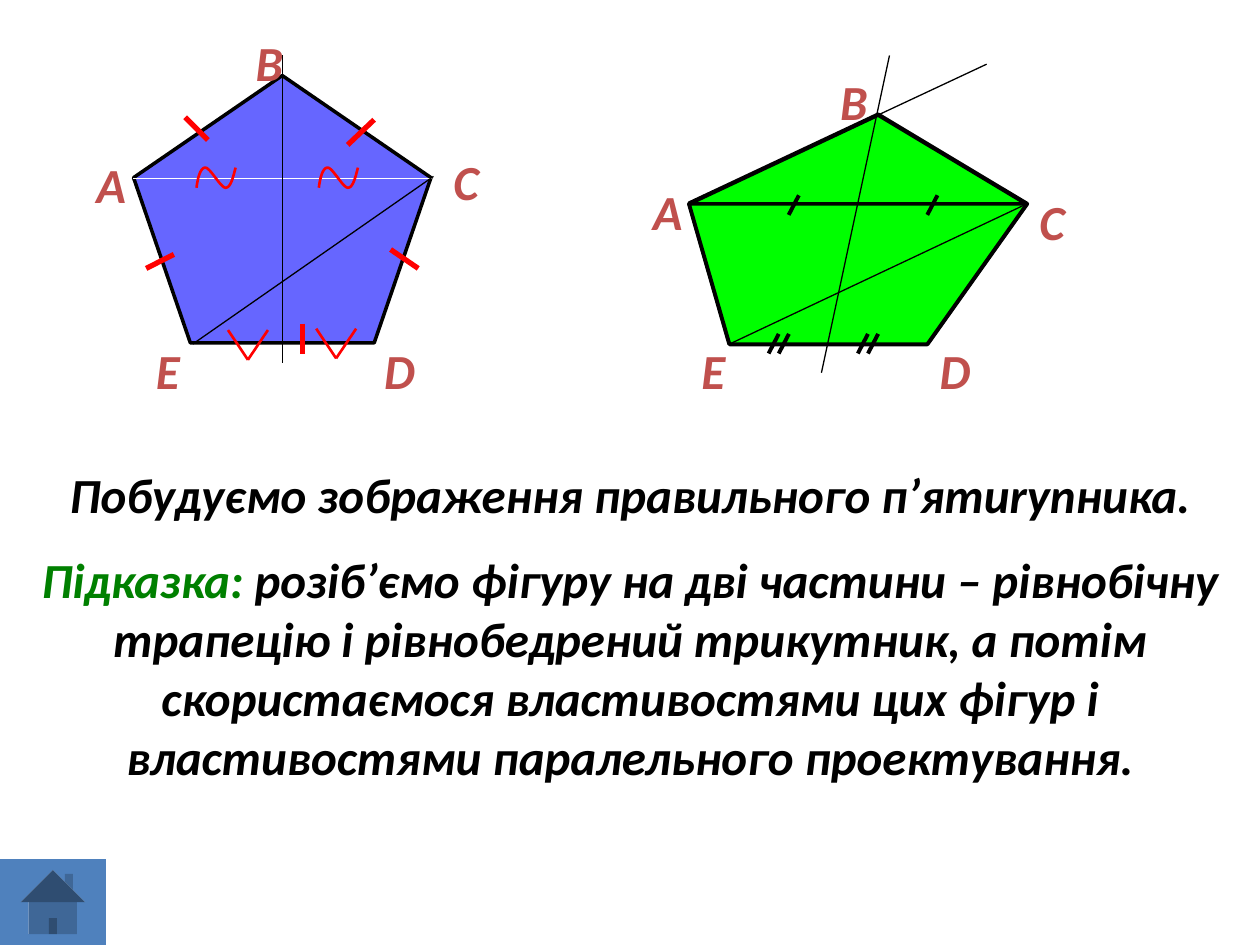
from dataclasses import dataclass

from lxml.etree import SubElement
from pptx import Presentation
from pptx.dml.color import RGBColor
from pptx.enum.shapes import MSO_CONNECTOR, MSO_SHAPE
from pptx.enum.text import PP_ALIGN
from pptx.oxml.ns import qn
from pptx.util import Pt


@dataclass(frozen=True)
class Theme:
    font: str = "Calibri"
    text_size: float = 28
    thin: float = 0.75
    black: str = "000000"
    white: str = "FFFFFF"
    red: str = "FF0000"
    label: str = "C0504D"
    hint: str = "008000"
    blue: str = "0000FF"
    green: str = "00FF00"
    button: str = "4F81BD"


@dataclass(frozen=True)
class Box:
    left: float
    top: float
    width: float
    height: float

    def at(self, x, y):
        return Pt(self.left + x), Pt(self.top + y)


THEME = Theme()


def style_shape(shape, fill=None, line=None, width=0):
    shape.shadow.inherit = False
    if fill:
        shape.fill.solid()
        shape.fill.fore_color.rgb = RGBColor.from_string(fill)
    else:
        shape.fill.background()
    if line:
        shape.line.color.rgb = RGBColor.from_string(line)
        shape.line.width = Pt(width)
    else:
        shape.line.fill.background()


def add_line(slide, box, start, end, color, width):
    connector = slide.shapes.add_connector(
        MSO_CONNECTOR.STRAIGHT, *box.at(*start), *box.at(*end))
    connector.line.color.rgb = RGBColor.from_string(color)
    connector.line.width = Pt(width)
    SubElement(connector._element.spPr, qn("a:effectLst"))


def add_outline(slide, box, points, close, fill, line, width):
    builder = slide.shapes.build_freeform(*box.at(*points[0]), scale=1.0)
    builder.add_line_segments([box.at(*point) for point in points[1:]], close=close)
    style_shape(builder.convert_to_shape(), fill, line, width)


def add_run(paragraph, text, color):
    run = paragraph.add_run()
    run.text = text
    run.font.name = THEME.font
    run.font.size = Pt(THEME.text_size)
    run.font.bold = run.font.italic = True
    run.font.color.rgb = RGBColor.from_string(color)


def add_vertex_labels(slide, box, positions):
    for letter, (x, y) in positions.items():
        width = 22 if letter == "A" else 28
        text_box = slide.shapes.add_textbox(*box.at(x, y), Pt(width), Pt(41))
        text_box.text_frame.word_wrap = True
        add_run(text_box.text_frame.paragraphs[0], letter, THEME.label)


def bezier_points(start, segments, steps=12):
    """Points along a chain of cubic curves."""
    points = [start]
    for first, second, end in segments:
        for step in range(1, steps + 1):
            t = step / steps
            weights = ((1 - t) ** 3, 3 * t * (1 - t) ** 2, 3 * t * t * (1 - t), t ** 3)
            corners = (start, first, second, end)
            points.append(tuple(
                sum(weight * corner[axis] for weight, corner in zip(weights, corners))
                for axis in (0, 1)))
        start = end
    return points


def add_wave(slide, box, x, y):
    curve = bezier_points((0, 11.5), [
        ((0.7, 5.8), (2.2, 0), (5, 0)),
        ((7.9, 0), (13.7, 11.5), (16.6, 11.5)),
        ((19.4, 11.5), (20.9, 5.8), (22.3, 0)),
    ])
    points = [(x + dx, y + dy) for dx, dy in curve]
    add_outline(slide, box, points, False, None, THEME.red, 1.5)


def add_chevron(slide, box, x, y):
    tip = (x + 11.4, y + 17)
    add_line(slide, box, (x, y), tip, THEME.red, 1.5)
    add_line(slide, box, tip, (x + 22.8, y), THEME.red, 1.5)


def add_regular_pentagon(slide, box):
    pentagon = slide.shapes.add_shape(
        MSO_SHAPE.REGULAR_PENTAGON, *box.at(28.3, 28.2), Pt(170), Pt(152.8))
    style_shape(pentagon, THEME.blue, THEME.black, 2)
    color = pentagon._element.spPr.find(qn("a:solidFill"))[0]
    SubElement(color, qn("a:alpha")).set("val", "60000")

    add_vertex_labels(slide, box, {
        "A": (0, 70), "B": (91, 0), "C": (204, 68), "D": (164.4, 175.8), "E": (34, 175.8)})
    side_ticks = [
        ((57.8, 52), (70.8, 65)),
        ((51.4, 130.4), (35.5, 138.4)),
        ((124.8, 170), (124.8, 187.3)),
        ((175.2, 127.6), (191, 138.4)),
        ((165.8, 53.4), (150.7, 67.8)),
    ]
    for start, end in side_ticks:
        add_line(slide, box, start, end, THEME.red, 3)

    add_line(slide, box, (28.3, 87.2), (199, 87.2), THEME.white, THEME.thin)
    add_line(slide, box, (113.3, 16.7), (113.3, 192.4), THEME.black, THEME.thin)
    add_line(slide, box, (62.2, 181.6), (199.7, 85.8), THEME.black, THEME.thin)
    for x in (64.3, 134.2):
        add_wave(slide, box, x, 80.8)
    for x, y in ((82.3, 173.6), (132.7, 172.8)):
        add_chevron(slide, box, x, y)


def add_projected_pentagon(slide, box):
    a, b, c, d, e = (27.8, 85.3), (135.8, 34.5), (220.8, 85.5), (163.9, 165.6), (50.9, 165.6)
    add_outline(slide, box, [a, b, c, d, e], True, THEME.green, THEME.black, 2.5)
    add_outline(slide, box, [e, d, c, (a[0], c[1])], True, THEME.green, THEME.black, 2)

    for start, end in (((103.4, 182), (142.3, 0.7)), (e, c), (a, (197.8, 5.7))):
        add_line(slide, box, start, end, THEME.black, THEME.thin)
    add_vertex_labels(slide, box, {
        "A": (0, 69), "B": (107, 6.4), "C": (220.8, 74.8),
        "D": (163.9, 159.8), "E": (27.8, 159.8)})

    diagonal_ticks = [(x, 80.6) for x in (90.5, 169.7)]
    base_ticks = [(x + gap, 159.8) for x in (79, 130) for gap in (0, 5.8)]
    for x, y in diagonal_ticks + base_ticks:
        add_line(slide, box, (x, y), (x - 5.8, y + 11.2), THEME.black, 2.25)


def add_task_text(slide, box):
    text_box = slide.shapes.add_textbox(*box.at(0, 0), Pt(box.width), Pt(box.height))
    frame = text_box.text_frame
    frame.word_wrap = True
    task = frame.paragraphs[0]
    add_run(task, "Побудуємо зображення правильного п’ятиrуnника.", THEME.black)
    hint = frame.add_paragraph()
    hint.space_before = Pt(15)
    add_run(hint, "Підказка:", THEME.hint)
    add_run(hint, " розіб’ємо фігуру на дві частини – рівнобічну трапецію і "
            "рівнобедрений трикутник, а потім скористаємося властивостями цих "
            "фігур і властивостями паралельного проектування.", THEME.black)
    for paragraph in (task, hint):
        paragraph.alignment = PP_ALIGN.CENTER


def add_home_button(slide, box):
    button = slide.shapes.add_shape(
        MSO_SHAPE.ACTION_BUTTON_HOME, *box.at(0, 0), Pt(box.width), Pt(box.height))
    style_shape(button, THEME.button)


def main():
    presentation = Presentation()
    presentation.slide_width, presentation.slide_height = Pt(720), Pt(540)
    slide = presentation.slides.add_slide(presentation.slide_layouts[6])
    add_regular_pentagon(slide, Box(48, 15, 232, 217))
    add_projected_pentagon(slide, Box(366, 31, 249, 201))
    add_task_text(slide, Box(0, 262, 720, 259))
    add_home_button(slide, Box(0, 491, 60.5, 49))
    presentation.save("out.pptx")


if __name__ == "__main__":
    main()
